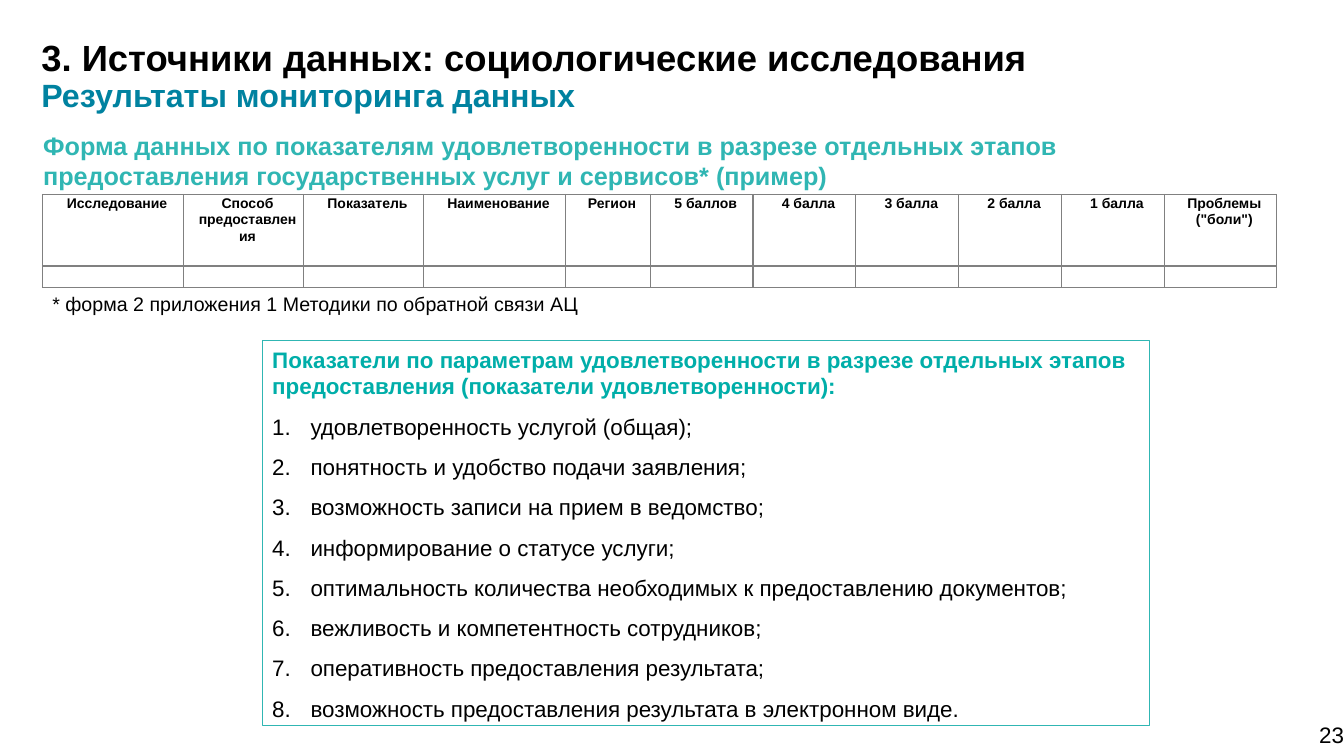
from pptx import Presentation
from pptx.dml.color import RGBColor
from pptx.enum.text import MSO_ANCHOR as Anchor, MSO_AUTO_SIZE as AutoSize, PP_ALIGN as Align
from pptx.oxml.ns import qn
from pptx.util import Inches, Pt
from lxml.etree import SubElement


def style(run, size, color="000000", bold=False):
    run.font.name = "Arial"
    run.font.size = Pt(size)
    run.font.bold = bold
    run.font.color.rgb = RGBColor.from_string(color)


def add_text(slide, box, text, size, color="000000", bold=False):
    shape = slide.shapes.add_textbox(*[Inches(value) for value in box])
    shape.text_frame.word_wrap = True
    shape.text_frame.text = text
    style(shape.text_frame.paragraphs[0].runs[0], size, color, bold)
    return shape.text_frame


presentation = Presentation()
presentation.slide_width = Inches(13.33)
presentation.slide_height = Inches(7.5)
slide = presentation.slides.add_slide(presentation.slide_layouts[1])

title = slide.shapes.title
title.left, title.top, title.width, title.height = [Inches(value) for value in (0.41, 0.4, 12.6, 0.83)]
title_frame = title.text_frame
title_frame.margin_left = title_frame.margin_right = 0
title_frame.margin_top = title_frame.margin_bottom = 0
title_frame.vertical_anchor = Anchor.TOP
title_frame.auto_size = AutoSize.NONE
title_frame.text = "3. Источники данных: социологические исследования\vРезультаты мониторинга данных"
title_paragraph = title_frame.paragraphs[0]
title_paragraph.alignment = Align.LEFT
title_paragraph.line_spacing = 0.9
for run, size, color in zip(title_paragraph.runs, (26, 23), ("000000", "0082A0")):
    style(run, size, color, True)

add_text(
    slide, (0.33, 1.24, 12.24, 0.71),
    "Форма данных по показателям удовлетворенности в разрезе отдельных этапов "
    "предоставления государственных услуг и сервисов* (пример)",
    18, "30B6B3", True,
)

headers = [
    "Исследование", "Способ предоставления", "Показатель", "Наименование", "Регион",
    "5 баллов", "4 балла", "3 балла", "2 балла", "1 балла", 'Проблемы ("боли")',
]
column_widths = [1.4, 1.19, 1.19, 1.41, 0.84] + [1.02] * 5 + [1.11]
row_heights = [0.71, 0.21]
table = slide.shapes.add_table(
    2, len(headers), Inches(0.42), Inches(1.93), Inches(12.22), Inches(0.92)
).table
table.first_row = table.horz_banding = False
for column, width in zip(table.columns, column_widths):
    column.width = Inches(width)
for row, height, texts in zip(table.rows, row_heights, (headers, [""] * len(headers))):
    row.height = Inches(height)
    for cell, text in zip(row.cells, texts):
        cell.margin_left = cell.margin_right = Inches(0.07)
        cell.margin_top = cell.margin_bottom = 0
        properties = cell._tc.get_or_add_tcPr()
        for side in ("a:lnL", "a:lnR", "a:lnT", "a:lnB"):
            border = SubElement(properties, qn(side), w=str(Pt(1)))
            border_fill = SubElement(border, qn("a:solidFill"))
            SubElement(border_fill, qn("a:srgbClr"), val="808080")
        cell.fill.background()
        cell.text_frame.text = text
        paragraph = cell.text_frame.paragraphs[0]
        paragraph.alignment = Align.CENTER
        paragraph.line_spacing = 1.07
        paragraph._p.get_or_add_pPr().set("marL", str(Inches(0.08)))
        for run in paragraph.runs:
            style(run, 10, bold=True)
        if not text:
            SubElement(paragraph._p, qn("a:endParaRPr"), sz="1000")

add_text(
    slide, (0.42, 2.85, 12.22, 0.34),
    "* форма 2 приложения 1 Методики по обратной связи АЦ", 14,
)

indicators = [
    "удовлетворенность услугой (общая);",
    "понятность и удобство подачи заявления;",
    "возможность записи на прием в ведомство;",
    "информирование о статусе услуги;",
    "оптимальность количества необходимых к предоставлению документов;",
    "вежливость и компетентность сотрудников;",
    "оперативность предоставления результата;",
    "возможность предоставления результата в электронном виде.",
]
body = slide.placeholders[1]
body.left, body.top, body.width, body.height = [Inches(value) for value in (2.6, 3.38, 8.8, 3.82)]
body.line.color.rgb = RGBColor.from_string("30B6B3")
body.line.width = Pt(0.75)
body_frame = body.text_frame
body_frame.auto_size = AutoSize.NONE
body_frame.vertical_anchor = Anchor.TOP
body_frame.text = (
    "Показатели по параметрам удовлетворенности в разрезе отдельных этапов "
    "предоставления (показатели удовлетворенности):"
)
heading = body_frame.paragraphs[0]
heading.space_before = Pt(0)
heading_properties = heading._p.get_or_add_pPr()
heading_properties.set("marL", "0")
heading_properties.set("indent", "0")
SubElement(heading_properties, qn("a:buNone"))
style(heading.runs[0], 16, "00AEA9", True)
for indicator in indicators:
    paragraph = body_frame.add_paragraph()
    paragraph.text = indicator
    paragraph.space_before = Pt(0)
    paragraph.line_spacing = 1.5
    item_properties = paragraph._p.get_or_add_pPr()
    item_properties.set("marL", str(Inches(0.38)))
    item_properties.set("indent", str(-Inches(0.38)))
    SubElement(item_properties, qn("a:buFont"), typeface="+mj-lt")
    SubElement(item_properties, qn("a:buAutoNum"), type="arabicPeriod")
    style(paragraph.runs[0], 16)

number_frame = add_text(slide, (12.27, 7.07, 1.06, 0.43), "23", 16)
number_frame.margin_left = number_frame.margin_right = 0
number_frame.margin_top = number_frame.margin_bottom = 0
number_frame.vertical_anchor = Anchor.MIDDLE
number_frame.paragraphs[0].alignment = Align.RIGHT

presentation.save("out.pptx")
